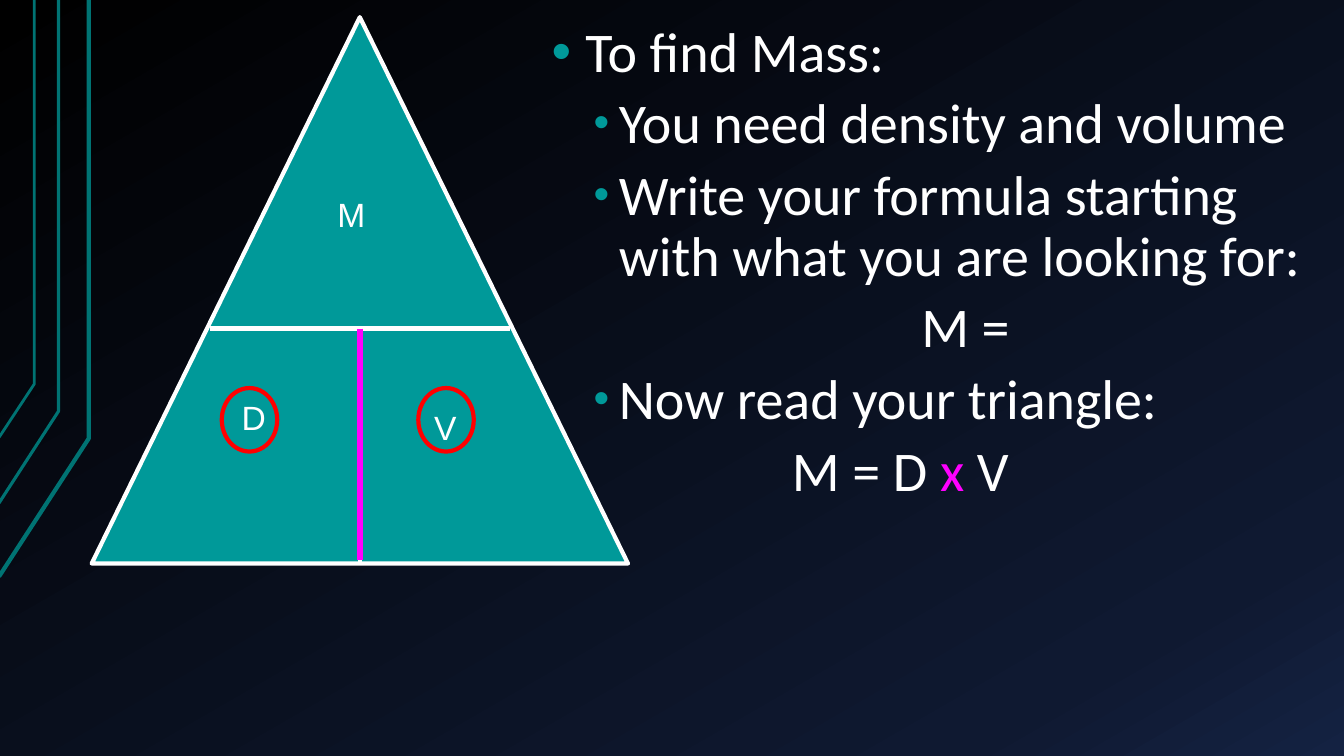
from lxml.etree import SubElement
from pptx import Presentation
from pptx.dml.color import RGBColor
from pptx.enum.shapes import MSO_CONNECTOR, MSO_SHAPE
from pptx.oxml.ns import qn
from pptx.util import Emu, Pt

COLS, ROWS, UNIT = 160, 90, 76200
WHITE, TEAL, DARK_TEAL = "FFFFFF", "009999", "007373"
RED, MAGENTA = "FF0000", "FF00FF"
APEX_X, APEX_Y, BASE_Y, HALF_BASE = 42.84, 2.04, 67.08, 31.92
DIVIDER_Y, DIVIDER_HALF = 39.12, 17.88
TRACKS = [(10.56, 52.2, 68.64, 3), (6.96, 48.96, 59.88, 2.25), (4.08, 45.72, 52.08, 2)]
LABELS = [("D", 27.6, 46.68), ("M", 39, 22.44), ("V", 50.52, 47.88)]
STEPS = [
    (0, 4, -4, 100, [("To find Mass:", WHITE)]),
    (1, 8, -3, 80, [("You need density and volume", WHITE)]),
    (1, 8, -3, 80, [("Write your formula starting with what you are looking for:", WHITE)]),
    (2, 44, 0, None, [("M =", WHITE)]),
    (1, 8, -3, 80, [("Now read your triangle:", WHITE)]),
    (1, 28.6, 0, None, [("M = D ", WHITE), ("x ", MAGENTA), ("V", WHITE)]),
]


def grid(*values):
    return [Emu(round(v * UNIT)) for v in values]


def rgb(color):
    return RGBColor.from_string(color)


def apply(target, values):
    for name, value in values.items():
        setattr(target, name, value)


def add_xml(parent, tag, **attrs):
    return SubElement(parent, qn(tag), {k: str(v) for k, v in attrs.items()})


def set_background(s):
    fill = s.background.fill
    fill.gradient()
    grad = s.background._cSld.find(".//" + qn("a:gradFill"))
    stops = grad.find(qn("a:gsLst"))
    for stop in list(stops):
        stops.remove(stop)
    for pos, color in ((0, "000000"), (85, "0F1931"), (100, "142242")):
        add_xml(add_xml(stops, "a:gs", pos=pos * 1000), "a:srgbClr", val=color)
    apply(grad.find(qn("a:lin")), {"ang": 60.0})


def style(sp, color, width, fill=None):
    sp.shadow.inherit = False
    if fill:
        sp.fill.solid()
        sp.fill.fore_color.rgb = rgb(fill)
    else:
        sp.fill.background()
    sp.line.color.rgb = rgb(color)
    sp.line.width = Pt(width)


def add_track(s, x, bend_y, end_y, width):
    start, bend, top = grid(-0.12, end_y), grid(x, bend_y), grid(x, 0)
    builder = s.shapes.build_freeform(*start, scale=1.0)
    builder.add_line_segments([bend, top], close=False)
    style(builder.convert_to_shape(), DARK_TEAL, width)


def add_preset(s, kind, box, color, fill=None):
    style(s.shapes.add_shape(kind, *grid(*box)), color, 3, fill)


def add_line(s, ends, color, width):
    line = s.shapes.add_connector(MSO_CONNECTOR.STRAIGHT, *grid(*ends))
    line.line.color.rgb = rgb(color)
    line.line.width = Pt(width)
    add_xml(line._element.spPr, "a:effectLst")


def add_run(p, text, font, size, color):
    r = p.add_run()
    r.text = text
    apply(r.font, {"name": font, "size": Pt(size)})
    r.font.color.rgb = rgb(color)


def add_label(s, text, x, y):
    tf = s.shapes.add_textbox(*grid(x, y, 11.52, 11.76)).text_frame
    tf.word_wrap = True
    add_run(tf.paragraphs[0], text, "Arial", 24, WHITE)


def add_bullet(p, percent):
    pPr = p._p.get_or_add_pPr()
    if percent is None:
        add_xml(pPr, "a:buNone")
        return
    add_xml(add_xml(pPr, "a:buClr"), "a:srgbClr", val=TEAL)
    add_xml(pPr, "a:buSzPct", val=percent * 1000)
    add_xml(pPr, "a:buFont", typeface="Arial")
    add_xml(pPr, "a:buChar", char="•")


def add_steps(s, box):
    tf = s.shapes.add_textbox(*grid(*box)).text_frame
    side, edge = grid(1.6, 0.8)
    apply(tf, {"word_wrap": True, "margin_left": side, "margin_right": side,
               "margin_top": edge, "margin_bottom": edge})
    for i, (level, margin, indent, bullet, runs) in enumerate(STEPS):
        p = tf.add_paragraph() if i else tf.paragraphs[0]
        apply(p, {"level": level, "line_spacing": 0.9, "space_before": Pt(8 if i else 16)})
        pPr = p._p.get_or_add_pPr()
        for name, value in zip(("marL", "indent"), grid(margin, indent)):
            pPr.set(name, str(value))
        add_bullet(p, bullet)
        for text, color in runs:
            add_run(p, text, "Calibri", 40, color)


def main():
    prs = Presentation()
    prs.slide_width, prs.slide_height = grid(COLS, ROWS)
    s = prs.slides.add_slide(prs.slide_layouts[6])
    set_background(s)
    for track in TRACKS:
        add_track(s, *track)
    add_steps(s, (64.08, 2.04, 93.84, 86.04))
    triangle = (APEX_X - HALF_BASE, APEX_Y, 2 * HALF_BASE, BASE_Y - APEX_Y)
    add_preset(s, MSO_SHAPE.ISOSCELES_TRIANGLE, triangle, WHITE, TEAL)
    add_line(s, (APEX_X - DIVIDER_HALF, DIVIDER_Y, APEX_X + DIVIDER_HALF, DIVIDER_Y), WHITE, 3)
    add_line(s, (APEX_X, DIVIDER_Y, APEX_X, BASE_Y), WHITE, 3)
    for label in LABELS:
        add_label(s, *label)
    for x in (26.4, 49.8):
        add_preset(s, MSO_SHAPE.OVAL, (x, 46.2, 6.6, 7.56), RED)
    add_line(s, (APEX_X, DIVIDER_Y, APEX_X, 66.72), MAGENTA, 4)
    prs.save("out.pptx")


if __name__ == "__main__":
    main()
